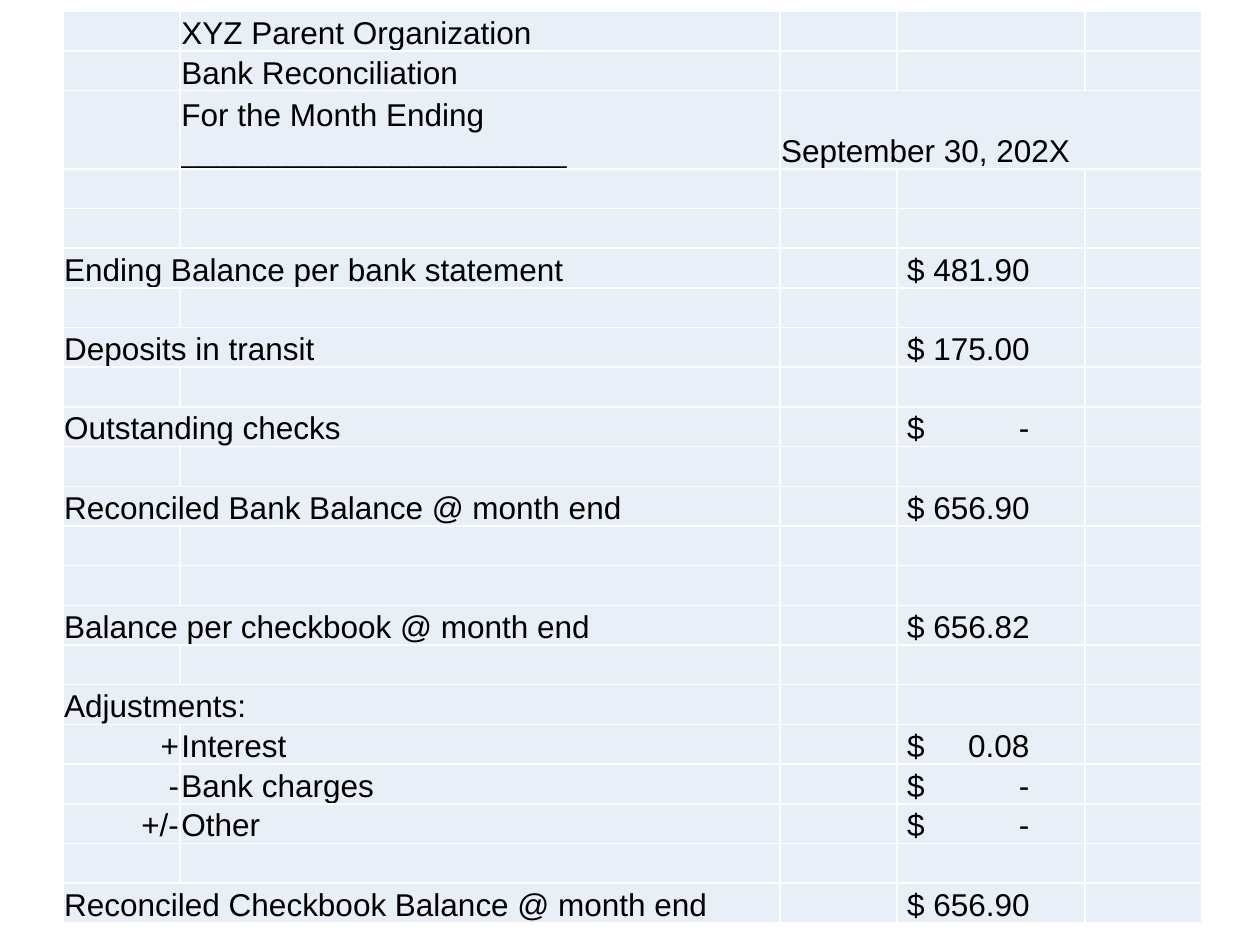
from lxml import etree
from pptx import Presentation
from pptx.dml.color import RGBColor
from pptx.enum.text import MSO_ANCHOR, PP_ALIGN
from pptx.oxml.ns import qn
from pptx.util import Inches, Pt

BOTTOM = MSO_ANCHOR.BOTTOM
RIGHT = PP_ALIGN.RIGHT

WIDE, HIGH = 10, 7.5
COLS = [0.93, 4.76, 0.93, 1.49, 0.93]
TALL_ROW, TALL = 2, 0.62
FULL = 7.24
SIGN, LABEL, DATE, SUM = 0, 1, 2, 3
TAB = 0.97

# One entry per row: column -> text; a missing column is blank
ROWS = [
    {LABEL: "XYZ Parent Organization"},
    {LABEL: "Bank Reconciliation"},
    {LABEL: "For the Month Ending " + "_" * 22, DATE: "September 30, 202X"},
    {},
    {},
    {SIGN: "Ending Balance per bank statement", SUM: "$ 481.90"},
    {},
    {SIGN: "Deposits in transit", SUM: "$ 175.00"},
    {},
    {SIGN: "Outstanding checks", SUM: "$\t-"},
    {},
    {SIGN: "Reconciled Bank Balance @ month end", SUM: "$ 656.90"},
    {},
    {},
    {SIGN: "Balance per checkbook @ month end", SUM: "$ 656.82"},
    {},
    {SIGN: "Adjustments:"},
    {SIGN: "+", LABEL: "Interest", SUM: "$\t0.08"},
    {SIGN: "-", LABEL: "Bank charges", SUM: "$\t-"},
    {SIGN: "+/-", LABEL: "Other", SUM: "$\t-"},
    {},
    {SIGN: "Reconciled Checkbook Balance @ month end", SUM: "$ 656.90"},
]


def color(code):
    return RGBColor.from_string(code)


class Sheet:
    font, size = "Arial", 18
    ink, fill, rule = "000000", "E9EFF7", "FFFFFF"

    def __init__(self, deck):
        self.slide = deck.slides.add_slide(deck.slide_layouts[6])

    def table(self, left, top, cols, rows):
        frame = self.slide.shapes.add_table(
            len(rows), len(cols), Inches(left), Inches(top),
            Inches(sum(cols)), Inches(sum(rows)))
        grid = frame.table
        grid.first_row = grid.horz_banding = False
        for col, width in zip(grid.columns, cols):
            col.width = Inches(width)
        for row, height in zip(grid.rows, rows):
            row.height = Inches(height)
        return grid

    def border(self, cell):
        props = cell._tc.get_or_add_tcPr()
        for side in ("lnL", "lnR", "lnT", "lnB"):
            line = etree.SubElement(props, qn("a:" + side), w=str(Pt(1)))
            solid = etree.SubElement(line, qn("a:solidFill"))
            etree.SubElement(solid, qn("a:srgbClr"), val=self.rule)

    def cell(self, cell, text, inset=0.01, align=None, tab=None):
        self.border(cell)
        cell.fill.solid()
        cell.fill.fore_color.rgb = color(self.fill)
        cell.vertical_anchor = BOTTOM
        cell.margin_left = Inches(inset)
        cell.margin_right = cell.margin_top = Inches(0.01)
        cell.margin_bottom = 0
        para = cell.text_frame.paragraphs[0]
        para.text = text
        if align:
            para.alignment = align
        if tab:
            stops = etree.SubElement(para._p.get_or_add_pPr(), qn("a:tabLst"))
            etree.SubElement(stops, qn("a:tab"), pos=str(Inches(tab)), algn="r")
        para.font.name = self.font
        para.font.size = Pt(self.size)
        para.font.color.rgb = color(self.ink)


def main():
    deck = Presentation()
    deck.slide_width, deck.slide_height = Inches(WIDE), Inches(HIGH)
    sheet = Sheet(deck)

    # All rows but the date row share the height evenly
    heights = [(FULL - TALL) / (len(ROWS) - 1)] * len(ROWS)
    heights[TALL_ROW] = TALL
    grid = sheet.table(0.5, 0.09, COLS, heights)

    for r, row in enumerate(ROWS):
        # Cell text and style
        for c in range(len(COLS)):
            text = row.get(c, "")
            style = {}
            if c == SUM and text:
                style = {"inset": 0.08, "tab": TAB if "\t" in text else None}
            elif c == SIGN and LABEL in row:
                style = {"align": RIGHT}
            sheet.cell(grid.cell(r, c), text, **style)

        # Headings without a sign span two columns, the date spans three
        if SIGN in row and LABEL not in row:
            grid.cell(r, SIGN).merge(grid.cell(r, LABEL))
        if DATE in row:
            grid.cell(r, DATE).merge(grid.cell(r, len(COLS) - 1))

    deck.save("out.pptx")


if __name__ == "__main__":
    main()
